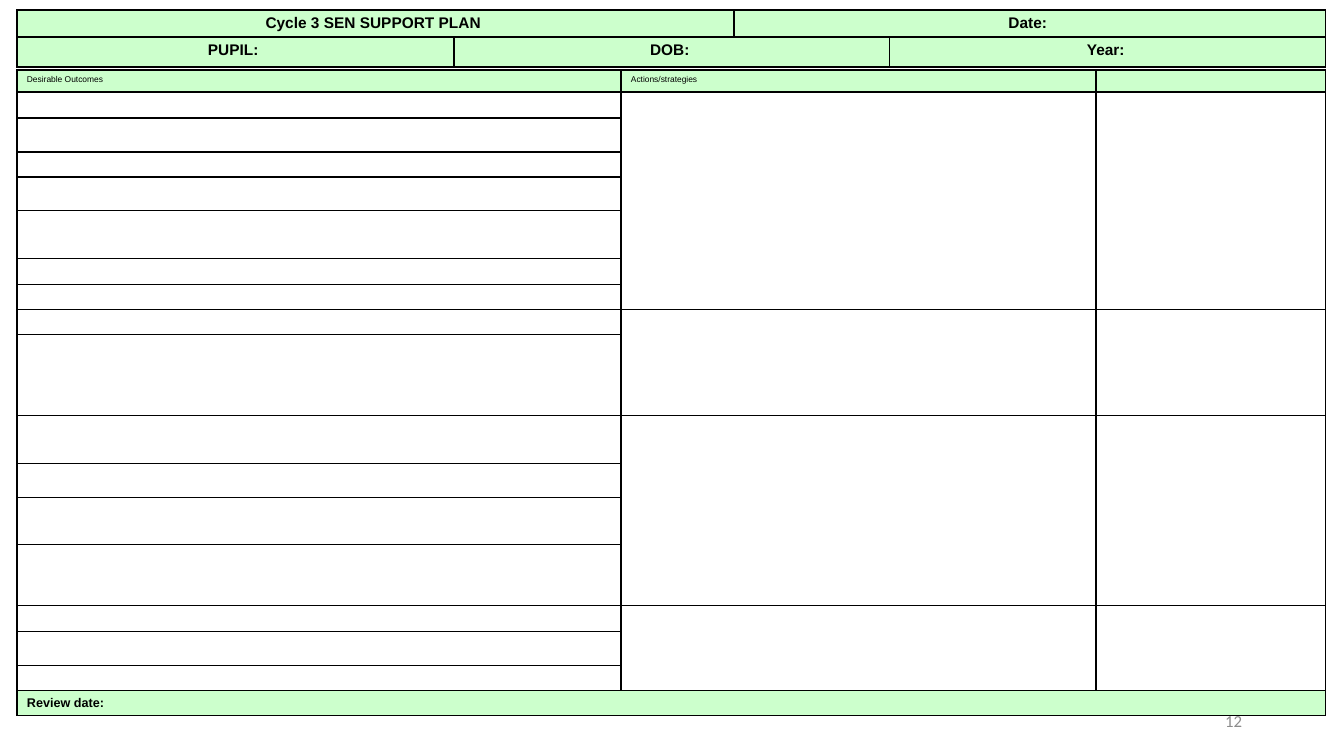
from lxml.etree import SubElement
from pptx import Presentation
from pptx.dml.color import RGBColor
from pptx.enum.text import MSO_ANCHOR as Anchor, PP_ALIGN as Align
from pptx.oxml.ns import qn
from pptx.util import Emu, Pt

SLIDE_W, SLIDE_H = 1344, 756
EMU_PER_PX = 12192000 / SLIDE_W
COLORS = {"line": "000000", "text": "000000", "header": "CCFFCC",
          "body": "FFFFFF", "number": "8C8C8C"}

LEFT = 17
PUPIL_COLS = [437, 280, 156, 436]
PUPIL_ROWS = [27, 30]
PLAN_COLS = [604, 475, 230]
PLAN_ROWS = [22, 26, 34, 25, 34, 48, 26, 25, 25, 81,
             48, 34, 47, 61, 26, 34, 25, 25]
ACTION_GROUPS = [(1, 7), (8, 9), (10, 13), (14, 16)]


def px(n):
    return Emu(round(n * EMU_PER_PX))


class Sheet:
    def __init__(self, prs):
        self.slide = prs.slides.add_slide(prs.slide_layouts[6])

    def style(self, p, size, color="text", name="Arial", bold=False, align=Align.LEFT):
        p.alignment = align
        font = p.font
        font.name, font.size, font.bold = name, Pt(size), bold
        font.color.rgb = RGBColor.from_string(COLORS[color])

    def text(self, x, y, w, h, text, **style):
        tf = self.slide.shapes.add_textbox(px(x), px(y), px(w), px(h)).text_frame
        tf.word_wrap = True
        tf.vertical_anchor = Anchor.MIDDLE
        p = tf.paragraphs[0]
        p.text = text
        self.style(p, **style)

    def borders(self, cell):
        tc_pr = cell._tc.get_or_add_tcPr()
        for side in ("lnL", "lnR", "lnT", "lnB"):
            ln = SubElement(tc_pr, qn(f"a:{side}"), w=str(Pt(1)))
            fill = SubElement(ln, qn("a:solidFill"))
            SubElement(fill, qn("a:srgbClr"), val=COLORS["line"])

    def table(self, x, y, cols, rows, header_rows, merges):
        """Add an empty bordered table; merges holds (top, left, bottom, right)."""
        frame = self.slide.shapes.add_table(
            len(rows), len(cols), px(x), px(y), px(sum(cols)), px(sum(rows)))
        table = frame.table
        table.first_row = table.horz_banding = False
        for col, w in zip(table.columns, cols):
            col.width = px(w)
        for i, (row, h) in enumerate(zip(table.rows, rows)):
            row.height = px(h)
            for cell in row.cells:
                self.borders(cell)
                cell.fill.solid()
                color = COLORS["header" if i in header_rows else "body"]
                cell.fill.fore_color.rgb = RGBColor.from_string(color)
                cell.margin_left = cell.margin_right = px(10)
                cell.margin_top, cell.margin_bottom = px(5), 0
                # The end mark sets the line height of an empty cell
                SubElement(cell.text_frame.paragraphs[0]._p, qn("a:endParaRPr"), sz="600")
        for top, left, bottom, right in merges:
            table.cell(top, left).merge(table.cell(bottom, right))
        return table

    def label(self, table, row, col, text, **style):
        p = table.cell(row, col).text_frame.paragraphs[0]
        p.text = text
        self.style(p, **style)


def main():
    prs = Presentation()
    prs.slide_width, prs.slide_height = px(SLIDE_W), px(SLIDE_H)
    s = Sheet(prs)
    s.text(950, 701, 302, 40, "12", size=12, color="number", name="Calibri",
           align=Align.RIGHT)

    pupil = s.table(LEFT, 10, PUPIL_COLS, PUPIL_ROWS, (0, 1),
                    [(0, 0, 0, 1), (0, 2, 0, 3), (1, 1, 1, 2)])
    for row, col, text in [(0, 0, "Cycle 3 SEN SUPPORT PLAN "), (0, 2, "Date: "),
                           (1, 0, "PUPIL: "), (1, 1, "DOB: "), (1, 3, "Year: ")]:
        s.label(pupil, row, col, text, size=11, bold=True, align=Align.CENTER)

    last = len(PLAN_ROWS) - 1
    merges = [(top, col, bottom, col) for top, bottom in ACTION_GROUPS for col in (1, 2)]
    plan = s.table(LEFT, 70, PLAN_COLS, PLAN_ROWS, (0, last), merges + [(last, 0, last, 2)])
    for col, text in enumerate(["Desirable Outcomes", "Actions/strategies"]):
        s.label(plan, 0, col, text, size=6)
    s.label(plan, last, 0, "Review date:", size=9, bold=True)

    prs.save("out.pptx")


if __name__ == "__main__":
    main()
